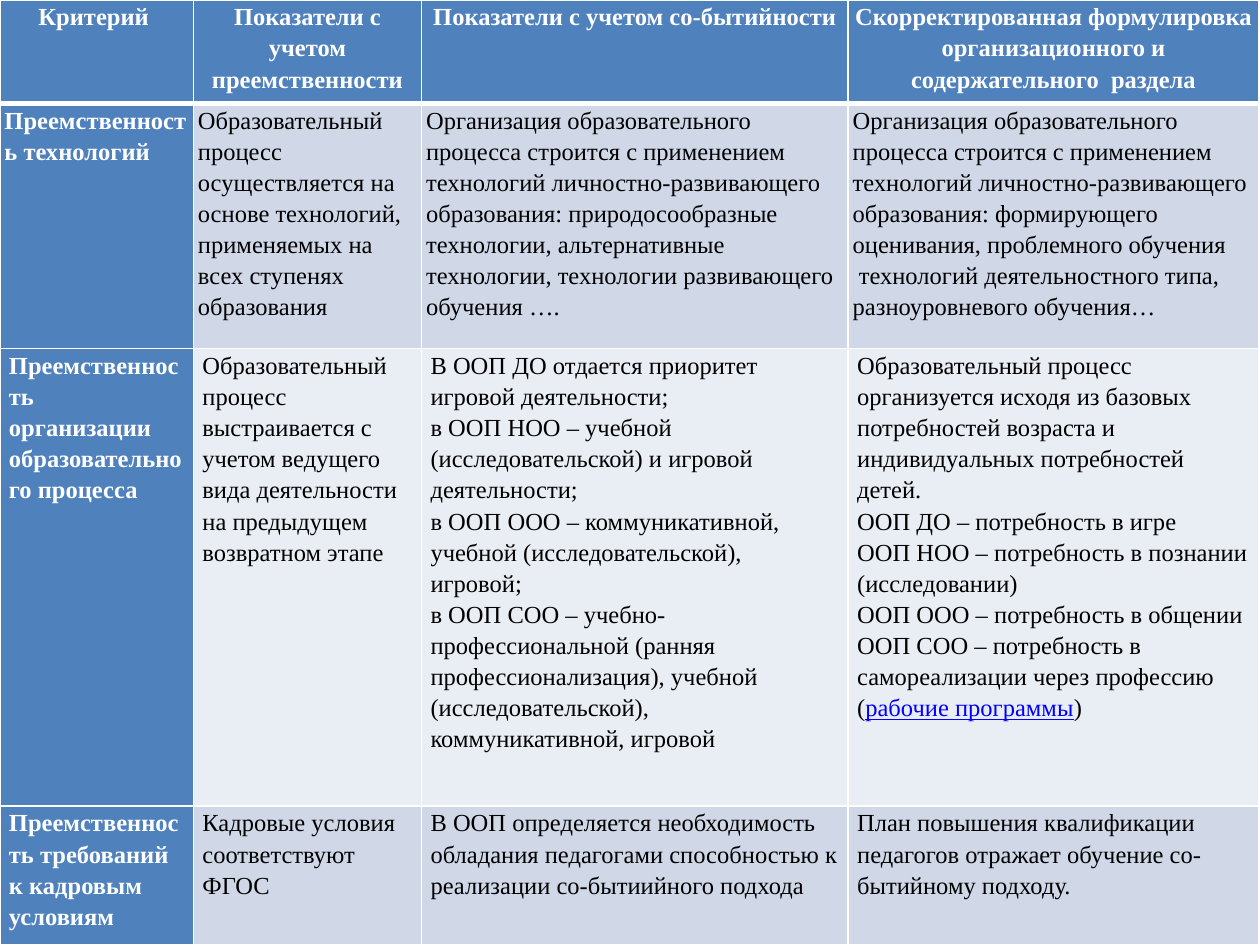
from dataclasses import dataclass

from lxml.etree import SubElement
from pptx import Presentation
from pptx.dml.color import RGBColor
from pptx.enum.text import PP_ALIGN
from pptx.oxml.ns import qn
from pptx.slide import Slide
from pptx.table import _Cell
from pptx.text.text import _Paragraph
from pptx.util import Cm, Pt

WHITE, BLACK, LINK_BLUE = "FFFFFF", "000000", "0000FF"
HEADING_BLUE, BAND_DARK, BAND_LIGHT = "4F81BD", "D0D8E8", "E9EDF4"
COLUMN_WIDTHS = (3.9, 4.6, 8.6, 8.28)


@dataclass(frozen=True)
class Link:
    text: str


@dataclass(frozen=True)
class Row:
    height: float
    inset: float
    band: str
    cells: tuple


ROWS = (
    Row(2.08, 0.09, HEADING_BLUE, (
        ["Критерий "],
        ["Показатели с учетом преемственности"],
        ["Показатели с учетом со-бытийности"],
        ["Скорректированная формулировка организационного и содержательного  раздела"],
    )),
    Row(4.95, 0.09, BAND_DARK, (
        ["Преемственность технологий"],
        ["Образовательный процесс осуществляется на основе технологий, "
         "применяемых на всех ступенях образования"],
        ["Организация образовательного процесса строится с применением технологий "
         "личностно-развивающего образования: природосообразные технологии, "
         "альтернативные технологии, технологии развивающего обучения …."],
        ["Организация образовательного процесса строится с применением технологий "
         "личностно-развивающего образования: формирующего оценивания, проблемного обучения",
         " технологий деятельностного типа, разноуровневого обучения…"],
    )),
    Row(9.22, 0.18, BAND_LIGHT, (
        ["Преемственность", "организации образовательного процесса"],
        ["Образовательный процесс выстраивается с учетом ведущего вида деятельности "
         "на предыдущем возвратном этапе"],
        ["В ООП ДО отдается приоритет игровой деятельности;",
         "в ООП НОО – учебной (исследовательской) и игровой деятельности;",
         "в ООП ООО – коммуникативной, учебной (исследовательской), игровой;",
         "в ООП СОО – учебно-профессиональной (ранняя профессионализация), "
         "учебной (исследовательской), коммуникативной, игровой"],
        ["Образовательный процесс организуется исходя из базовых потребностей возраста "
         "и индивидуальных потребностей детей.",
         "ООП ДО – потребность в игре",
         "ООП НОО – потребность в познании (исследовании)",
         "ООП ООО – потребность в общении",
         "ООП СОО – потребность в самореализации через профессию",
         ("(", Link("рабочие программы"), ")")],
    )),
    Row(2.8, 0.18, BAND_DARK, (
        ["Преемственность требований к кадровым условиям"],
        ["Кадровые условия соответствуют ФГОС"],
        ["В ООП определяется необходимость обладания педагогами способностью "
         "к реализации со-бытиийного подхода"],
        ["План повышения квалификации педагогов отражает обучение со-бытийному подходу."],
    )),
)


def rgb(value: str) -> RGBColor:
    return RGBColor.from_string(value)


def paint_background(slide: Slide) -> None:
    fill = slide.background.fill
    fill.gradient()
    for stop, color, position in zip(fill.gradient_stops, (WHITE, "979797"), (0, 1)):
        stop.color.rgb = rgb(color)
        stop.position = position
    gradient = slide.background._cSld.find(".//" + qn("a:gradFill"))
    gradient.remove(gradient.find(qn("a:lin")))
    focus = SubElement(gradient, qn("a:path"), path="circle")
    SubElement(focus, qn("a:fillToRect"), t="100000", r="100000")


def add_border(cell: _Cell, side: str, width: float) -> None:
    line = SubElement(cell._tc.get_or_add_tcPr(), qn(f"a:ln{side}"), w=str(Pt(width)))
    SubElement(SubElement(line, qn("a:solidFill")), qn("a:srgbClr"), val=WHITE)


def add_run(paragraph: _Paragraph, part: str | Link, heading: bool) -> None:
    linked = isinstance(part, Link)
    run = paragraph.add_run()
    run.text = part.text if linked else part
    run.font.name = "Times New Roman"
    run.font.size = Pt(14)
    run.font.bold = heading
    run.font.underline = linked
    run.font.color.rgb = rgb(LINK_BLUE if linked else WHITE if heading else BLACK)


def fill_cell(cell: _Cell, content: list, row: Row, row_index: int, heading: bool) -> None:
    cell.margin_left = cell.margin_right = Cm(row.inset)
    cell.margin_top = cell.margin_bottom = Cm(0)
    add_border(cell, "L", 1)
    add_border(cell, "R", 1)
    add_border(cell, "T", 3 if row_index == 1 else 1)
    add_border(cell, "B", 3 if row_index == 0 else 1)
    cell.fill.solid()
    cell.fill.fore_color.rgb = rgb(HEADING_BLUE if heading else row.band)
    for index, parts in enumerate(content):
        frame = cell.text_frame
        paragraph = frame.add_paragraph() if index else frame.paragraphs[0]
        paragraph.line_spacing = 1.15
        paragraph.alignment = PP_ALIGN.LEFT if row_index else PP_ALIGN.CENTER
        for part in (parts,) if isinstance(parts, str) else parts:
            add_run(paragraph, part, heading)


def add_criteria_table(slide: Slide) -> None:
    total_height = sum(row.height for row in ROWS)
    criteria = slide.shapes.add_table(
        len(ROWS), len(COLUMN_WIDTHS), Cm(0), Cm(0),
        Cm(sum(COLUMN_WIDTHS)), Cm(total_height),
    ).table
    for column, width in zip(criteria.columns, COLUMN_WIDTHS):
        column.width = Cm(width)
    for row_index, row in enumerate(ROWS):
        criteria.rows[row_index].height = Cm(row.height)
        for column_index, content in enumerate(row.cells):
            heading = row_index == 0 or column_index == 0
            fill_cell(criteria.cell(row_index, column_index), content, row, row_index, heading)


def main() -> None:
    presentation = Presentation()
    presentation.slide_width = Cm(25.4)
    presentation.slide_height = Cm(19.05)
    slide = presentation.slides.add_slide(presentation.slide_layouts[6])
    paint_background(slide)
    add_criteria_table(slide)
    presentation.save("out.pptx")


if __name__ == "__main__":
    main()
